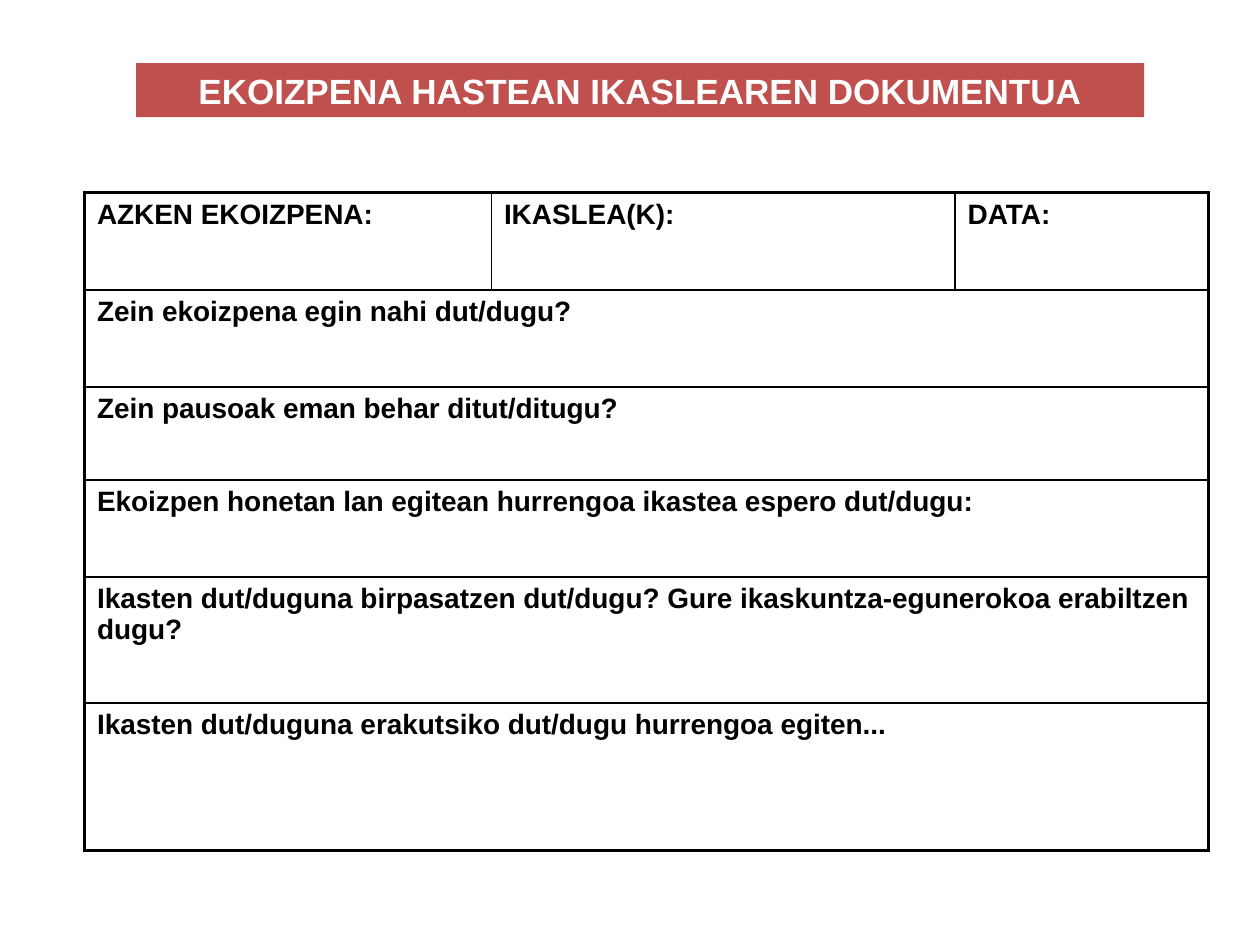
from dataclasses import dataclass

from lxml import etree
from pptx import Presentation
from pptx.dml.color import RGBColor
from pptx.enum.text import MSO_ANCHOR, PP_ALIGN
from pptx.oxml.ns import qn
from pptx.util import Emu, Inches, Pt

CENTER, LEFT = PP_ALIGN.CENTER, PP_ALIGN.LEFT
MIDDLE = MSO_ANCHOR.MIDDLE
SLIDE_W, SLIDE_H = Inches(10), Inches(7.5)
FONT = "Arial"
RED, WHITE, BLACK = "C0504D", "FFFFFF", "000000"
OUTER, INNER = 2.25, 1  # rule widths in points


@dataclass
class FormRow:
    height: float  # percent of the slide's height
    labels: tuple[str, ...]


# Column widths in percent of the slide's width
COLUMNS = (32.3, 36.8, 20.1)
FORM = (
    FormRow(10.27, ("AZKEN EKOIZPENA:", "IKASLEA(K):", "DATA:")),
    FormRow(10.27, ("Zein ekoizpena egin nahi dut/dugu?",)),
    FormRow(9.87, ("Zein pausoak eman behar ditut/ditugu?",)),
    FormRow(10.27, ("Ekoizpen honetan lan egitean hurrengoa ikastea espero dut/dugu:",)),
    FormRow(13.33, ("Ikasten dut/duguna birpasatzen dut/dugu? "
                    "Gure ikaskuntza-egunerokoa erabiltzen dugu?",)),
    FormRow(15.6, ("Ikasten dut/duguna erakutsiko dut/dugu hurrengoa egiten...",)),
)


def rgb(color: str) -> RGBColor:
    return RGBColor.from_string(color)


def across(percent: float) -> Emu:
    return Emu(round(SLIDE_W * percent / 100))


def down(percent: float) -> Emu:
    return Emu(round(SLIDE_H * percent / 100))


def write(frame, text: str, size: float, color: str, align) -> None:
    paragraph = frame.paragraphs[0]
    paragraph.alignment = align
    run = paragraph.add_run()
    run.text = text
    run.font.name, run.font.size, run.font.bold = FONT, Pt(size), True
    run.font.color.rgb = rgb(color)


def rule_cell(cell, widths: dict[str, float]) -> None:
    """Draw the cell's borders, given in the order L, R, T, B."""
    properties = cell._tc.get_or_add_tcPr()
    for place, (side, width) in enumerate(widths.items()):
        line = etree.Element(qn(f"a:ln{side}"), w=str(Pt(width)))
        fill = etree.SubElement(line, qn("a:solidFill"))
        etree.SubElement(fill, qn("a:srgbClr"), val=BLACK)
        properties.insert(place, line)


def draw_title(slide, text: str) -> None:
    title = slide.shapes.title
    title.left, title.top = across(10.8), down(6.67)
    title.width, title.height = across(80), down(5.73)
    title.fill.solid()
    title.fill.fore_color.rgb = rgb(RED)
    title.text_frame.vertical_anchor = MIDDLE
    write(title.text_frame, text, 20, WHITE, CENTER)


def draw_form(slide, rows: tuple[FormRow, ...], columns: tuple[float, ...]) -> None:
    last_row, last_column = len(rows) - 1, len(columns) - 1
    form = slide.shapes.add_table(
        len(rows), len(columns), across(6.7), down(20.4),
        across(sum(columns)), down(sum(row.height for row in rows))).table
    form.first_row = form.horz_banding = False
    for column, width in zip(form.columns, columns):
        column.width = across(width)

    for r, row in enumerate(rows):
        form.rows[r].height = down(row.height)
        # A single question spans the whole row
        if len(row.labels) == 1:
            form.cell(r, 0).merge(form.cell(r, last_column))
        for c in range(len(columns)):
            cell = form.cell(r, c)
            cell.fill.background()
            rule_cell(cell, {
                "L": OUTER if c == 0 else INNER,
                "R": OUTER if c == last_column or len(row.labels) == 1 else INNER,
                "T": OUTER if r == 0 else INNER,
                "B": OUTER if r == last_row else INNER,
            })
        for c, label in enumerate(row.labels):
            write(form.cell(r, c).text_frame, label, 16, BLACK, LEFT)


def main() -> None:
    deck = Presentation()
    deck.slide_width, deck.slide_height = SLIDE_W, SLIDE_H
    slide = deck.slides.add_slide(deck.slide_layouts[5])  # title only
    draw_title(slide, "EKOIZPENA HASTEAN IKASLEAREN DOKUMENTUA")
    draw_form(slide, FORM, COLUMNS)
    deck.save("out.pptx")


if __name__ == "__main__":
    main()
